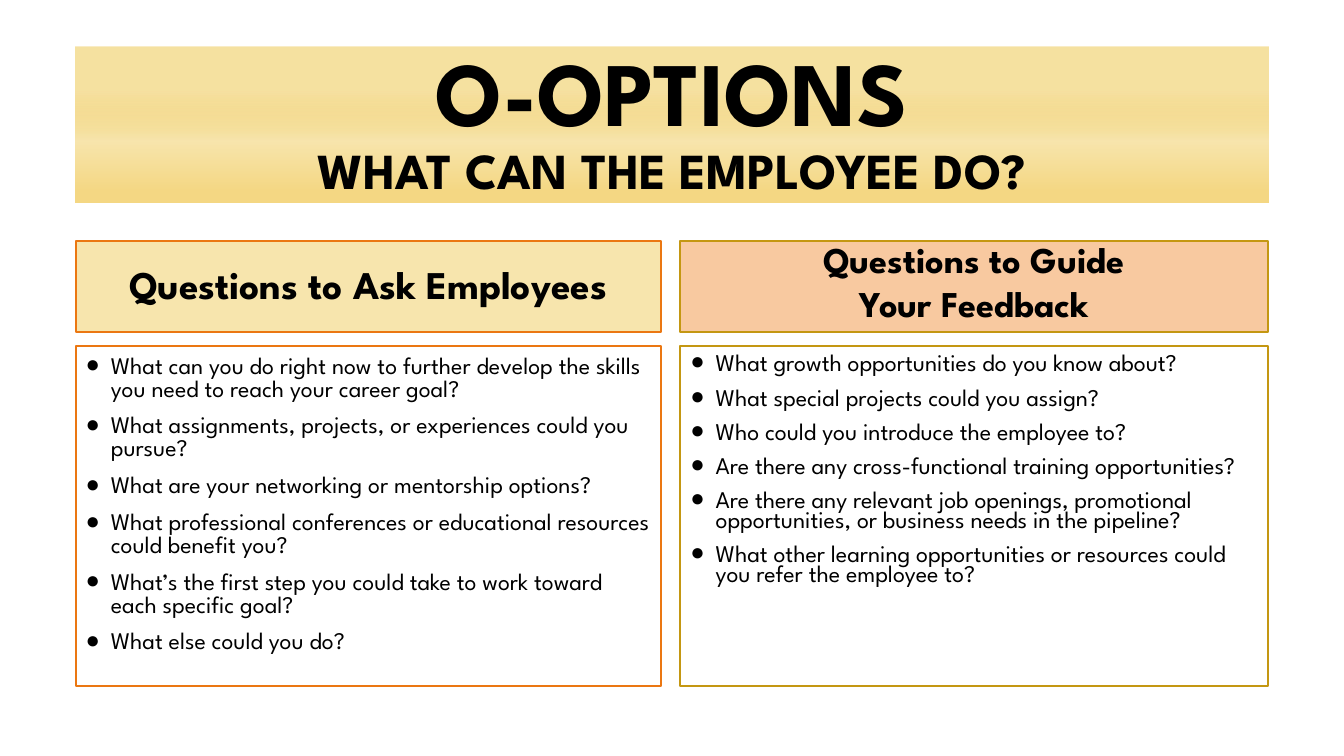
from lxml import etree
from pptx import Presentation
from pptx.dml.color import RGBColor
from pptx.enum.text import MSO_ANCHOR, MSO_AUTO_SIZE, PP_ALIGN
from pptx.oxml import parse_xml
from pptx.oxml.ns import nsdecls, qn
from pptx.util import Pt

TOP, MIDDLE = MSO_ANCHOR.TOP, MSO_ANCHOR.MIDDLE
CENTER, LEFT = PP_ALIGN.CENTER, PP_ALIGN.LEFT
NO_FIT = MSO_AUTO_SIZE.NONE

FONT = "League Spartan"
COLORS = {
    "text": "000000", "orange": "EB7712", "gold": "C49712",
    "cream": "F7E5AD", "peach": "F8C9A0",
    "band_top": "ECBD31", "band_bottom": "F4D783",
}
TITLE = [("O-OPTIONS", 64.8), ("WHAT CAN THE EMPLOYEE DO?", 36)]
BAND_STOPS = [(28, "band_top", 45), (60, "cream", 100), (92, "band_bottom", 100)]
COLUMNS = [
    {
        "width": 418, "line": "orange", "fill": "cream",
        "heading": ["Questions to Ask Employees"],
        "heading_size": 28, "heading_spacing": 0.9,
        "questions": [
            "What can you do right now to further develop the skills you need to reach your career goal?",
            "What assignments, projects, or experiences could you pursue?",
            "What are your networking or mentorship options?",
            "What professional conferences or educational resources could benefit you?",
            "What’s the first step you could take to work toward each specific goal?",
            "What else could you do?",
        ],
        "size": 17, "spacing": 0.8,
    },
    {
        "width": 420, "line": "gold", "fill": "peach",
        "heading": ["Questions to Guide", "Your Feedback"],
        "heading_size": 25.9, "heading_spacing": 0.7,
        "questions": [
            "What growth opportunities do you know about?",
            "What special projects could you assign?",
            "Who could you introduce the employee to?",
            "Are there any cross-functional training opportunities?",
            "Are there any relevant job openings, promotional opportunities, or business needs in the pipeline?",
            "What other learning opportunities or resources could you refer the employee to?",
        ],
        "size": 17.1, "spacing": 0.7,
    },
]
MARGIN, GAP = 54, 14
TITLE_TOP, TITLE_HEIGHT = 33, 112
HEADING_TOP, HEADING_HEIGHT = 172, 65
LIST_TOP, LIST_HEIGHT = 247, 243


def rgb(name):
    return RGBColor.from_string(COLORS[name])


def place(sp, left, top, width, height, anchor):
    sp.left, sp.top, sp.width, sp.height = map(Pt, (left, top, width, height))
    tf = sp.text_frame
    tf.word_wrap = True
    tf.auto_size = NO_FIT
    tf.vertical_anchor = anchor
    return tf


def outline(sp, color):
    sp.line.color.rgb = rgb(color)
    sp.line.width = Pt(1.5)


def add_run(p, text, size, bold):
    r = p.add_run()
    r.text = text
    r.font.name = FONT
    r.font.size = Pt(size)
    r.font.bold = bold
    r.font.color.rgb = rgb("text")


def add_bullet(p):
    pPr = p._p.get_or_add_pPr()
    pPr.set("marL", str(Pt(18)))
    pPr.set("indent", str(-Pt(18)))
    etree.SubElement(pPr, qn("a:buChar")).set("char", "●")


def write_paragraphs(tf, lines, size, spacing, align, bold=False, bullets=False):
    for i, line in enumerate(lines):
        p = tf.paragraphs[0] if i == 0 else tf.add_paragraph()
        p.alignment = align
        p.line_spacing = spacing
        p.space_before = Pt(10 if i else 0)
        p.space_after = Pt(0)
        if bullets:
            add_bullet(p)
        add_run(p, line, size, bold)


def fill_band(sp):
    """Give the title a vertical gradient with a translucent first stop."""
    stops = "".join(
        f'<a:gs pos="{pos * 1000}"><a:srgbClr val="{COLORS[color]}">'
        f'<a:alpha val="{alpha * 1000}"/></a:srgbClr></a:gs>'
        for pos, color, alpha in BAND_STOPS)
    sp._element.spPr.append(parse_xml(
        f'<a:gradFill {nsdecls("a")} rotWithShape="1"><a:gsLst>{stops}</a:gsLst>'
        '<a:lin ang="5400000" scaled="0"/></a:gradFill>'))


def add_title(sp):
    width = sum(column["width"] for column in COLUMNS) + GAP
    tf = place(sp, MARGIN, TITLE_TOP, width, TITLE_HEIGHT, MIDDLE)
    fill_band(sp)
    p = tf.paragraphs[0]
    p.alignment = CENTER
    p.line_spacing = 0.9
    for i, (text, size) in enumerate(TITLE):
        if i:
            p.add_line_break()
        add_run(p, text, size, True)


def add_column(heading, questions, left, column):
    width = column["width"]
    tf = place(heading, left, HEADING_TOP, width, HEADING_HEIGHT, MIDDLE)
    heading.fill.solid()
    heading.fill.fore_color.rgb = rgb(column["fill"])
    outline(heading, column["line"])
    write_paragraphs(tf, column["heading"], column["heading_size"],
                     column["heading_spacing"], CENTER, bold=True)

    tf = place(questions, left, LIST_TOP, width, LIST_HEIGHT, TOP)
    tf.margin_top = Pt(7.2)
    outline(questions, column["line"])
    write_paragraphs(tf, column["questions"], column["size"],
                     column["spacing"], LEFT, bullets=True)


def main():
    prs = Presentation()
    prs.slide_width, prs.slide_height = Pt(960), Pt(540)
    s = prs.slides.add_slide(prs.slide_layouts.get_by_name("Comparison"))
    title, *boxes = s.placeholders
    add_title(title)
    left = MARGIN
    for heading, questions, column in zip(boxes[::2], boxes[1::2], COLUMNS):
        add_column(heading, questions, left, column)
        left += column["width"] + GAP
    prs.save("out.pptx")


if __name__ == "__main__":
    main()
